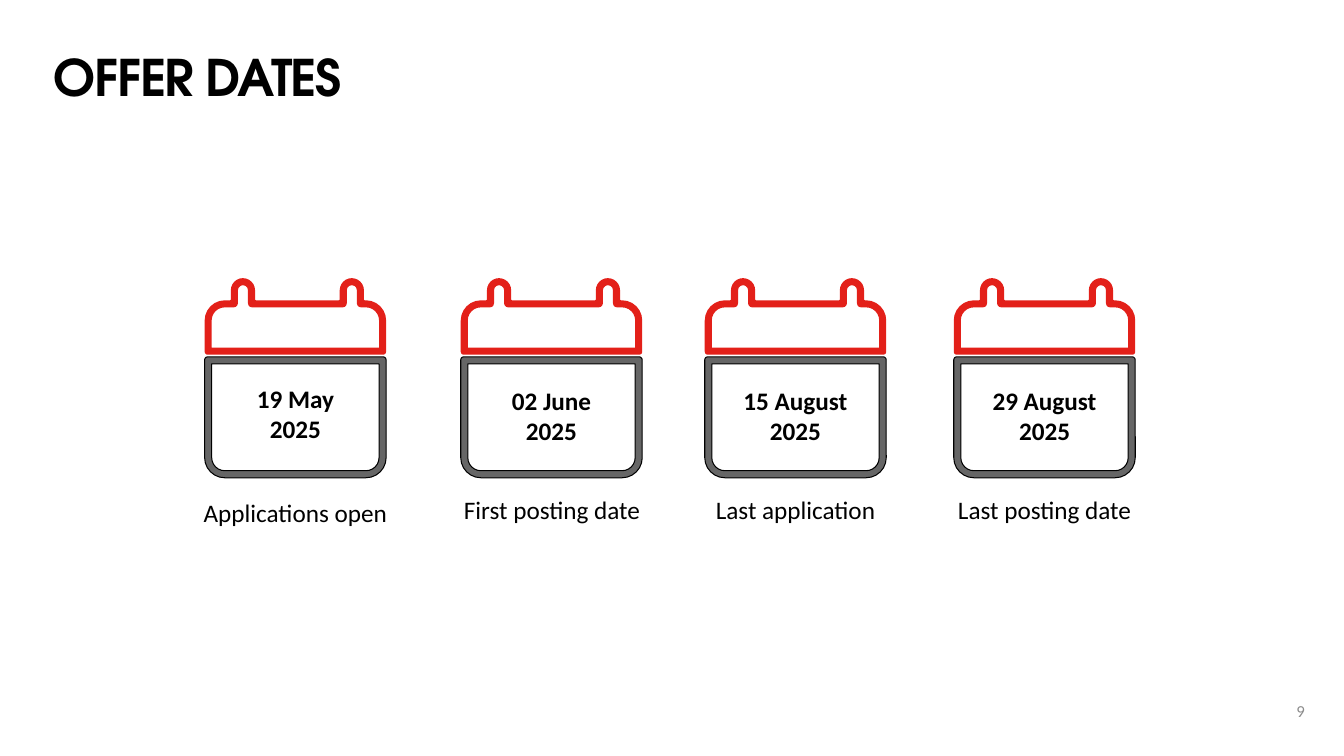
"""Build the offer dates slide: four calendars with a date and a caption each."""
import math
from dataclasses import dataclass

import lxml.etree
import pptx
import pptx.dml.color
import pptx.enum.text
import pptx.oxml.ns
import pptx.util

PX = 9144
HUES = {"red": "E32019", "grey": "666666", "black": "000000", "pale": "8C8C8C"}
ALIGN = pptx.enum.text.PP_ALIGN
ANCHOR = pptx.enum.text.MSO_ANCHOR
WIDE, HEAD, BODY, RIM = 180, 76, 120, 7
TOP, LOW = 276, 354

Point = tuple[float, float]
Corner = tuple[int, int, int]


@dataclass
class Event:
    left: int
    date: str
    span: int
    date_y: int
    label: str
    width: int
    label_y: int


@dataclass
class Bend:
    start: tuple[int, int]
    radius: int
    angle: int
    sweep: int


EVENTS = [
    Event(203, "19 May\n2025", 98, 375, "Applications open", 204, 488),
    Event(457, "02 June\n2025", 100, 377, "First posting date", 197, 485),
    Event(699, "15 August\n2025", 124, 377, "Last application", 180, 485),
    Event(946, "29 August\n2025", 124, 377, "Last posting date", 194, 485),
]


def color(name: str) -> pptx.dml.color.RGBColor:
    return pptx.dml.color.RGBColor.from_string(HUES[name])


def head_ring(rim: int) -> list[Corner]:
    foot, fold = (0, 4) if rim else (3, 1)
    high, mid, base = rim, 22 + rim, HEAD - rim
    tabs = []
    for left in (26, 134):
        a, b = left + rim, left + 24 - rim
        tabs += [(a, mid, fold), (a, high, 12 - rim),
                 (b, high, 12 - rim), (b, mid, fold)]
    far = WIDE - rim
    return [(rim, base, foot), (rim, mid, 20 - rim), *tabs,
            (far, mid, 20 - rim), (far, base, foot)]


def body_ring(rim: int) -> list[Corner]:
    tip = 0 if rim else 3
    far, base = WIDE - rim, BODY - rim
    return [(rim, base, 20 - rim), (rim, rim, tip),
            (far, rim, tip), (far, base, 20 - rim)]


def toward(a: Corner, b: Corner) -> Point:
    gap = math.dist(a[:2], b[:2])
    return (b[0] - a[0]) / gap, (b[1] - a[1]) / gap


def bends(ring: list[Corner], left: int, top: int) -> list[Bend]:
    turns = []
    for i, now in enumerate(ring):
        x, y, r = now
        u = toward(now, ring[i - 1])
        v = toward(now, ring[(i + 1) % len(ring)])
        start = (round((left + x + r * u[0]) * PX),
                 round((top + y + r * u[1]) * PX))
        angle = round(math.degrees(math.atan2(-v[1], -v[0]))) % 360
        sweep = 90 if v[0] * u[1] > v[1] * u[0] else -90
        turns.append(Bend(start, r, angle, sweep))
    return turns


def add_arc(node, bend: Bend) -> None:
    size = str(bend.radius * PX)
    node.addnext(lxml.etree.Element(
        pptx.oxml.ns.qn("a:arcTo"), wR=size, hR=size,
        stAng=str(bend.angle * 60000), swAng=str(bend.sweep * 60000)))


def add_frame(shapes, left: int, top: int, rings: list[list[Corner]],
              fill: str, line: str | None = None) -> None:
    turns = [bends(ring, left, top) for ring in rings]
    pen = shapes.build_freeform(*turns[0][0].start, scale=1.0)
    for i, ring in enumerate(turns):
        if i:
            pen.move_to(*ring[0].start)
        pen.add_line_segments([bend.start for bend in ring[1:]], close=True)
    shape = pen.convert_to_shape()
    qn = pptx.oxml.ns.qn
    nodes = list(shape._element.iter(qn("a:moveTo"), qn("a:lnTo")))
    for node, bend in zip(nodes, sum(turns, [])):
        if bend.radius:
            add_arc(node, bend)
    shape.shadow.inherit = False
    shape.fill.solid()
    shape.fill.fore_color.rgb = color(fill)
    if line:
        shape.line.color.rgb = color(line)
        shape.line.width = pptx.util.Pt(0.75)
    else:
        shape.line.fill.background()


def add_text(slide, box: tuple[int, int, int, int], text: str, size: int,
             hue: str = "black", face: str = "Calibri", bold: bool = False,
             align: ALIGN = ALIGN.CENTER, wrap: bool = False):
    shape = slide.shapes.add_textbox(*(n * PX for n in box))
    frame = shape.text_frame
    frame.text = text
    frame.word_wrap = wrap
    if not wrap:
        frame.auto_size = pptx.enum.text.MSO_AUTO_SIZE.SHAPE_TO_FIT_TEXT
    for para in frame.paragraphs:
        para.alignment = align
        for run in para.runs:
            run.font.name = face
            run.font.size = pptx.util.Pt(size)
            run.font.bold = bold
            run.font.color.rgb = color(hue)
    return frame


def add_title(slide) -> None:
    frame = add_text(slide, (53, 45, 1101, 52), "OFFER DATES", 36,
                     face="TeX Gyre Adventor", bold=True,
                     align=ALIGN.LEFT, wrap=True)
    frame.margin_left = frame.margin_right = 0
    frame.margin_top = frame.margin_bottom = 0
    para = frame.paragraphs[0]
    para.line_spacing = pptx.util.Pt(44)
    para.runs[0].font._element.set("spc", "-100")


def add_event(slide, event: Event) -> None:
    add_frame(slide.shapes, event.left, TOP,
              [head_ring(0), head_ring(RIM)], "red")
    add_frame(slide.shapes, event.left, LOW,
              [body_ring(0), body_ring(RIM)], "grey", "black")
    mid = event.left + WIDE // 2
    add_text(slide, (mid - event.span // 2, event.date_y, event.span, 71),
             event.date, 18, bold=True)
    add_text(slide, (mid - event.width // 2, event.label_y, event.width, 40),
             event.label, 18)


def main() -> None:
    deck = pptx.Presentation()
    deck.slide_width, deck.slide_height = 1333 * PX, 750 * PX
    slide = deck.slides.add_slide(deck.slide_layouts[6])
    add_title(slide)
    for event in EVENTS:
        add_event(slide, event)
    page = add_text(slide, (1263, 685, 41, 40), "9", 12, "pale",
                    align=ALIGN.RIGHT, wrap=True)
    page.vertical_anchor = ANCHOR.MIDDLE
    deck.save("out.pptx")


if __name__ == "__main__":
    main()
